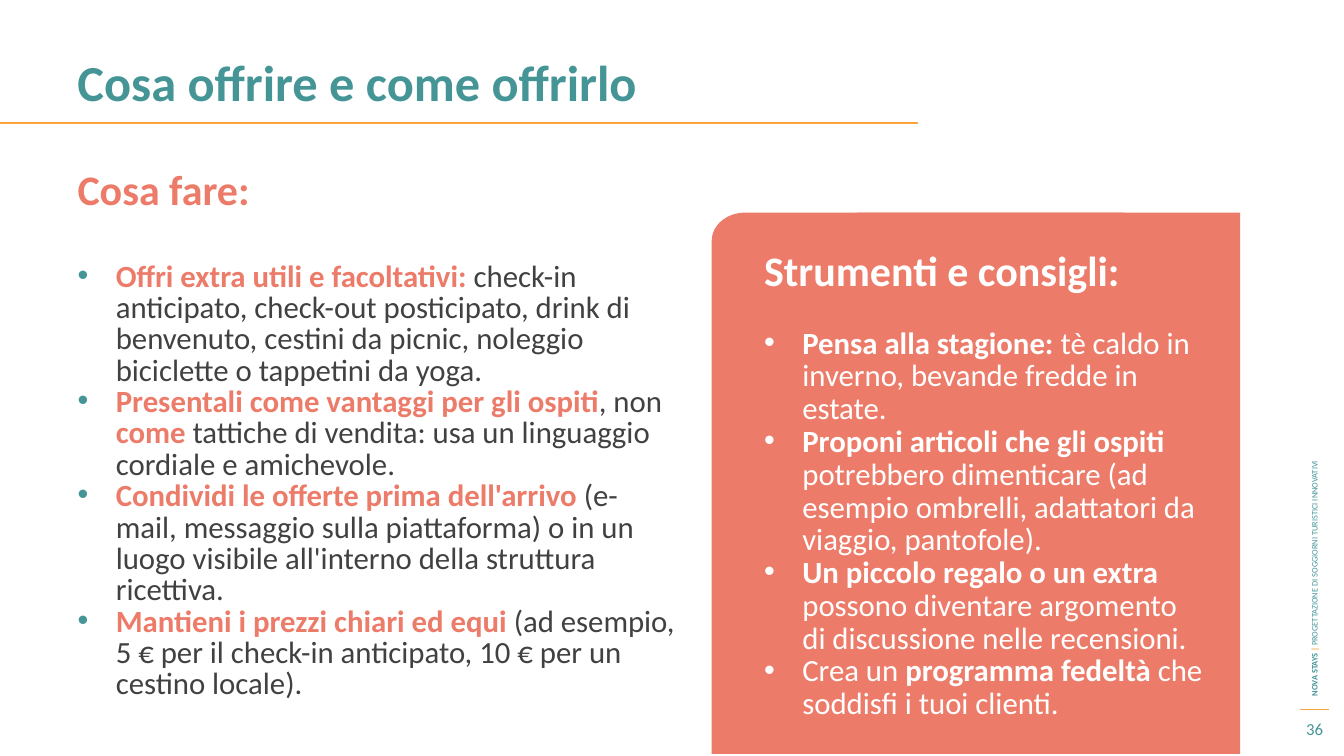
"""Build the slide on which extras to offer guests and how to offer them."""
from dataclasses import dataclass
from math import cos, pi, sin

from lxml import etree
from pptx import Presentation
from pptx.dml.color import RGBColor
from pptx.enum.shapes import MSO_CONNECTOR
from pptx.enum.text import MSO_ANCHOR, PP_ALIGN
from pptx.oxml.ns import qn
from pptx.util import Inches, Pt

STRAIGHT = MSO_CONNECTOR.STRAIGHT
TOP, MIDDLE = MSO_ANCHOR.TOP, MSO_ANCHOR.MIDDLE
LEFT, CENTER = PP_ALIGN.LEFT, PP_ALIGN.CENTER
WIDTH, HEIGHT = Inches(13.33), Inches(7.5)
FONT = "Calibri"
TEAL, ORANGE, CORAL, GREY, WHITE = "459597", "FBA63B", "EC7C69", "414141", "FFFFFF"


@dataclass
class Run:
    """A piece of text in one style."""
    text: str
    color: str
    bold: bool = False


@dataclass
class Para:
    """A paragraph, bulleted when a bullet colour is given."""
    runs: list[Run]
    size: float
    spacing: float | None = None
    bullet: str | None = None
    before: float = 0


@dataclass
class Box:
    """A text box placed in hundredths of the slide's width and height."""
    left: float
    top: float
    width: float
    height: float
    paras: list[Para]
    anchor: MSO_ANCHOR = TOP
    align: PP_ALIGN = LEFT
    rotation: float = 0


@dataclass
class Rule:
    """A horizontal line placed in hundredths of the slide."""
    start: float
    end: float
    y: float
    weight: float


def col(share: float) -> int:
    """Turn hundredths of the slide width into a length."""
    return round(WIDTH * share / 100)


def row(share: float) -> int:
    """Turn hundredths of the slide height into a length."""
    return round(HEIGHT * share / 100)


def rgb(color: str) -> RGBColor:
    """Turn a hex string into a colour."""
    return RGBColor.from_string(color)


def add_bullet(p, color: str) -> None:
    """Give a paragraph a hanging round bullet."""
    pPr = p._p.get_or_add_pPr()
    pPr.set("marL", str(Inches(0.38)))
    pPr.set("indent", str(-Inches(0.38)))
    clr = etree.SubElement(pPr, qn("a:buClr"))
    etree.SubElement(clr, qn("a:srgbClr"), val=color)
    etree.SubElement(pPr, qn("a:buFont"), typeface="Arial")
    etree.SubElement(pPr, qn("a:buChar"), char="•")


def add_box(s, box: Box) -> None:
    """Draw a text box run by run."""
    sp = s.shapes.add_textbox(col(box.left), row(box.top), col(box.width), row(box.height))
    sp.rotation = box.rotation
    tf = sp.text_frame
    tf.word_wrap = True
    tf.vertical_anchor = box.anchor
    for i, para in enumerate(box.paras):
        p = tf.add_paragraph() if i else tf.paragraphs[0]
        p.alignment = box.align
        if para.bullet:
            add_bullet(p, para.bullet)
        if para.spacing:
            p.line_spacing = Pt(para.spacing)
        if para.before:
            p.space_before = Pt(para.before)
        for run in para.runs:
            r = p.add_run()
            r.text = run.text
            r.font.name = FONT
            r.font.size = Pt(para.size)
            r.font.bold = run.bold
            r.font.color.rgb = rgb(run.color)


def add_rule(s, rule: Rule) -> None:
    """Draw an orange horizontal line."""
    sp = s.shapes.add_connector(STRAIGHT, col(rule.start), row(rule.y), col(rule.end), row(rule.y))
    sp.line.color.rgb = rgb(ORANGE)
    sp.line.width = Pt(rule.weight)
    etree.SubElement(sp._element.spPr, qn("a:effectLst"))


def add_panel(s, left: float) -> None:
    """Draw a coral panel with a rounded top left corner."""
    x, y, right, bottom = col(left), row(28.13), col(left + 30.68), row(99.73)
    rx, ry = col(2.48), row(3.73)
    angles = [pi / 2 * i / 16 for i in range(17)]
    arc = [(round(x + rx * (1 - cos(a))), round(y + ry * (1 - sin(a)))) for a in angles]
    builder = s.shapes.build_freeform(*arc[0])
    builder.add_line_segments(arc[1:] + [(right, y), (right, bottom), (x, bottom)])
    sp = builder.convert_to_shape()
    sp.fill.solid()
    sp.fill.fore_color.rgb = rgb(CORAL)
    sp.line.fill.background()
    sp.shadow.inherit = False


def advice(*runs: Run) -> Para:
    """Make a bulleted line of the left column."""
    return Para(list(runs), 22, 22.4, TEAL)


def tool(*runs: Run, before: float = 0) -> Para:
    """Make a bulleted line of the coral panel."""
    return Para(list(runs), 22, 23.4, WHITE, before)


RULES = [Rule(96.7, 98.87, 93.87, 0.75), Rule(0, 68.34, 16.27, 1.5)]
PANELS = [61.59, 52.96]
BOXES = [
    Box(76.14, 53.6, 43.29, 2.67, [Para([
        Run("NOVA STAYS ", TEAL, True),
        Run("| ", ORANGE, True),
        Run("PROGETTAZIONE DI SOGGIORNI TURISTICI INNOVATIVI", TEAL),
    ], 6)], MIDDLE, rotation=270),
    Box(5.03, 7.2, 90, 11.73, [Para([Run("Cosa offrire e come offrirlo", TEAL, True)], 36, 37.2)]),
    Box(95.87, 94.13, 3.9, 4.53, [Para([Run("36", TEAL)], 12)], MIDDLE, CENTER),
    Box(5.03, 22.27, 46.06, 11.73, [Para([Run("Cosa fare:", CORAL, True)], 30, 29)]),
    Box(5.03, 34, 46.06, 53.33, [
        advice(Run("Offri extra utili e facoltativi: ", CORAL, True),
               Run("check-in anticipato, check-out posticipato, drink di benvenuto, cestini da "
                   "picnic, noleggio biciclette o tappetini da yoga.", GREY)),
        advice(Run("Presentali come vantaggi per gli ospiti", CORAL, True),
               Run(", non ", GREY),
               Run("come ", CORAL, True),
               Run("tattiche di vendita: usa un linguaggio cordiale e amichevole.", GREY)),
        advice(Run("Condividi le offerte prima dell'arrivo ", CORAL, True),
               Run("(e-mail, messaggio sulla piattaforma) o in un luogo visibile all'interno "
                   "della struttura ricettiva.", GREY)),
        advice(Run("Mantieni i prezzi chiari ed equi ", CORAL, True),
               Run("(ad esempio, 5 € per il check-in anticipato, 10 € per un cestino locale).",
                   GREY)),
    ]),
    Box(56.11, 34, 34.21, 47.87, [
        Para([Run("Strumenti e consigli:", WHITE, True)], 30, 23.4),
        tool(Run("Pensa alla stagione: ", WHITE, True),
             Run("tè caldo in inverno, bevande fredde in estate.", WHITE), before=23.4),
        tool(Run("Proponi articoli che gli ospiti ", WHITE, True),
             Run("potrebbero dimenticare (ad esempio ombrelli, adattatori da viaggio, pantofole).",
                 WHITE)),
        tool(Run("Un piccolo regalo o un extra ", WHITE, True),
             Run("possono diventare argomento di discussione nelle recensioni.", WHITE)),
        tool(Run("Crea un ", WHITE),
             Run("programma fedeltà ", WHITE, True),
             Run("che soddisfi i tuoi clienti.", WHITE)),
    ]),
]


def main() -> None:
    """Draw the slide and save it."""
    prs = Presentation()
    prs.slide_width, prs.slide_height = WIDTH, HEIGHT
    s = prs.slides.add_slide(prs.slide_layouts[6])
    for left in PANELS:
        add_panel(s, left)
    for rule in RULES:
        add_rule(s, rule)
    for box in BOXES:
        add_box(s, box)
    prs.save("out.pptx")


if __name__ == "__main__":
    main()
